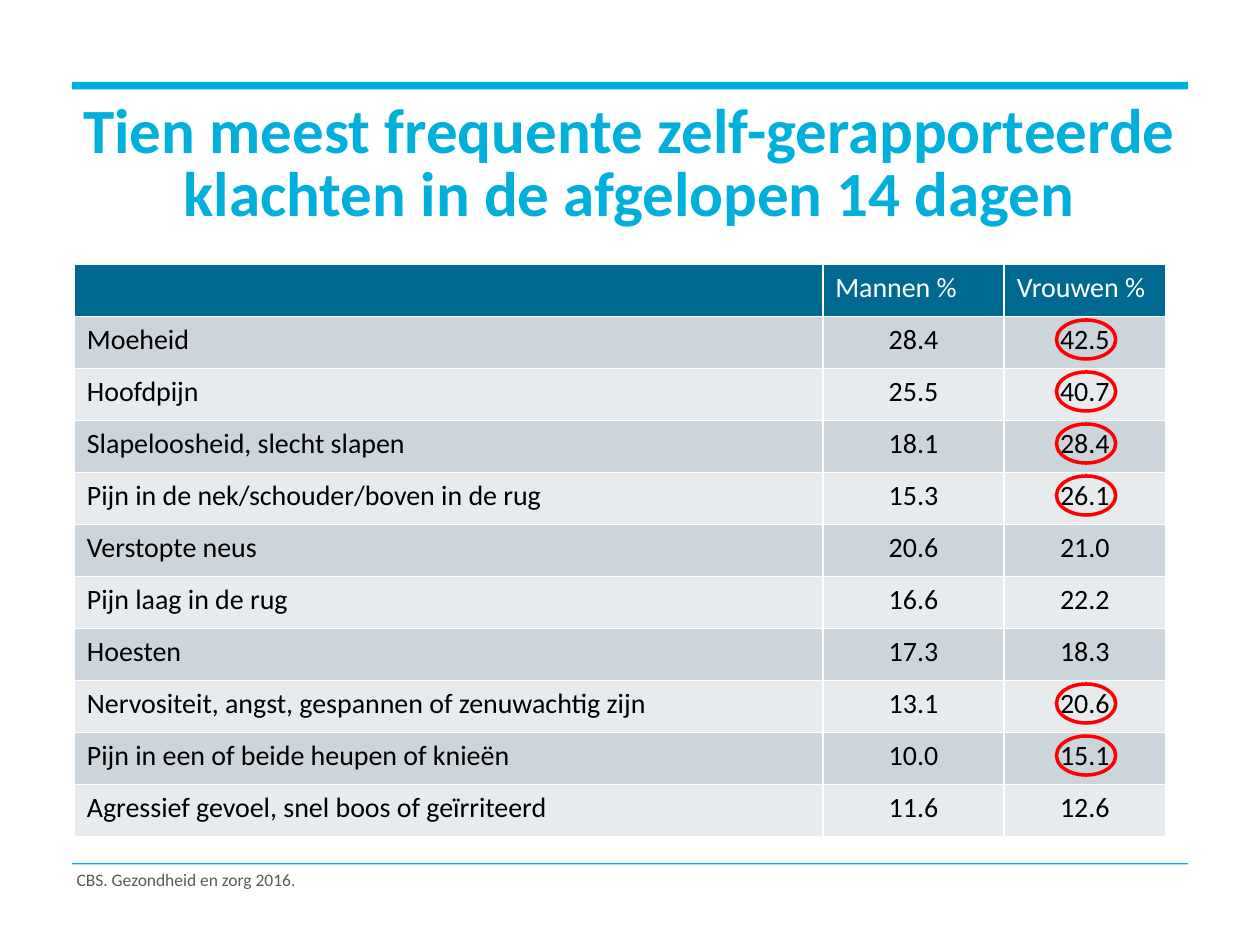
import pptx
import pptx.util
import pptx.dml.color
import pptx.enum.shapes
import pptx.enum.text

Inches = pptx.util.Inches
Pt = pptx.util.Pt
Shapes = pptx.enum.shapes.MSO_SHAPE
Align = pptx.enum.text.PP_ALIGN
Anchor = pptx.enum.text.MSO_ANCHOR

CYAN, RED, GREY = "00AFDC", "FF0000", "595959"
HEADER_FILL, BANDS = "006991", ("CCD4DC", "E7EBEE")
HEADINGS = ("", "Mannen %", "Vrouwen %")
COMPLAINTS = (
    ("Moeheid", "28.4", "42.5"),
    ("Hoofdpijn", "25.5", "40.7"),
    ("Slapeloosheid, slecht slapen", "18.1", "28.4"),
    ("Pijn in de nek/schouder/boven in de rug", "15.3", "26.1"),
    ("Verstopte neus", "20.6", "21.0"),
    ("Pijn laag in de rug", "16.6", "22.2"),
    ("Hoesten", "17.3", "18.3"),
    ("Nervositeit, angst, gespannen of zenuwachtig zijn", "13.1", "20.6"),
    ("Pijn in een of beide heupen of knieën", "10.0", "15.1"),
    ("Agressief gevoel, snel boos of geïrriteerd", "11.6", "12.6"),
)
COLUMN_WIDTHS = (5.94, 1.44, 1.28)
CIRCLED_ROWS = (1, 2, 3, 4, 8, 9)


def color(value):
    """Turn a hex string into a colour."""
    return pptx.dml.color.RGBColor.from_string(value)


def emu(box):
    """Turn a box in inches into slide units."""
    return [Inches(length) for length in box]


def set_text(frame, text, size, ink, align=Align.LEFT, bold=False):
    """Write one formatted paragraph and return it."""
    para = frame.paragraphs[0]
    para.text = text
    para.alignment = align
    font = para.font
    font.name, font.size, font.bold = "Calibri", Pt(size), bold
    font.color.rgb = color(ink)
    return para


def add_rule(page, box):
    """Draw a solid horizontal bar filling the box."""
    rule = page.shapes.add_shape(Shapes.RECTANGLE, *emu(box))
    rule.shadow.inherit = False
    rule.fill.solid()
    rule.fill.fore_color.rgb = color(CYAN)
    rule.line.fill.background()


def add_title(page, box, text):
    """Fill the title placeholder and move it into the box."""
    title = page.shapes.title
    title.left, title.top, title.width, title.height = emu(box)
    frame = title.text_frame
    frame.word_wrap = True
    frame.auto_size = pptx.enum.text.MSO_AUTO_SIZE.NONE
    frame.vertical_anchor = Anchor.TOP
    para = set_text(frame, text, 36, CYAN, Align.CENTER, True)
    para.line_spacing = Pt(36)


def add_source(page, box, text):
    """Place the source line in the box."""
    frame = page.shapes.add_textbox(*emu(box)).text_frame
    frame.word_wrap = True
    set_text(frame, text, 10, GREY)


def add_complaints(page, box):
    """Fill the box with the table of complaints."""
    rows = (HEADINGS,) + COMPLAINTS
    table = page.shapes.add_table(len(rows), len(HEADINGS), *emu(box)).table
    for column, width in zip(table.columns, COLUMN_WIDTHS):
        column.width = Inches(width)
    for row, values in enumerate(rows):
        for column, value in enumerate(values):
            cell = table.cell(row, column)
            cell.fill.solid()
            cell.fill.fore_color.rgb = color(BANDS[(row - 1) % 2] if row else HEADER_FILL)
            align = Align.CENTER if row and column else Align.LEFT
            set_text(cell.text_frame, value, 16, "000000" if row else "FFFFFF", align)


def circle_values(page, box):
    """Ring the marked values in the last column of the table box."""
    left, top, width, height = box
    pitch = height / (len(COMPLAINTS) + 1)
    ring_width, ring_height = 0.47, 0.31
    ring_left = left + width - (COLUMN_WIDTHS[-1] + ring_width) / 2 + 0.01
    for row in CIRCLED_ROWS:
        ring_top = top + (row + 0.44) * pitch - ring_height / 2
        ring = page.shapes.add_shape(
            Shapes.OVAL, *emu((ring_left, ring_top, ring_width, ring_height)))
        ring.shadow.inherit = False
        ring.fill.background()
        ring.line.color.rgb = color(RED)
        ring.line.width = Pt(2)


def main():
    """Build the slide and save the deck."""
    deck = pptx.Presentation()
    deck.slide_width, deck.slide_height = Inches(10), Inches(7.5)
    page = deck.slides.add_slide(deck.slide_layouts[5])
    table_box = (0.59, 2.1, sum(COLUMN_WIDTHS), 4.54)
    add_rule(page, (0.57, 0.65, 8.86, 0.06))
    add_rule(page, (0.57, 6.85, 8.86, 0.01))
    add_complaints(page, table_box)
    circle_values(page, table_box)
    add_source(page, (0.51, 6.85, 4.15, 0.27), "CBS. Gezondheid en zorg 2016.")
    add_title(page, (0.27, 0.77, 9.45, 1.12),
              "Tien meest frequente zelf-gerapporteerde klachten in de afgelopen 14 dagen")
    deck.save("out.pptx")


if __name__ == "__main__":
    main()
